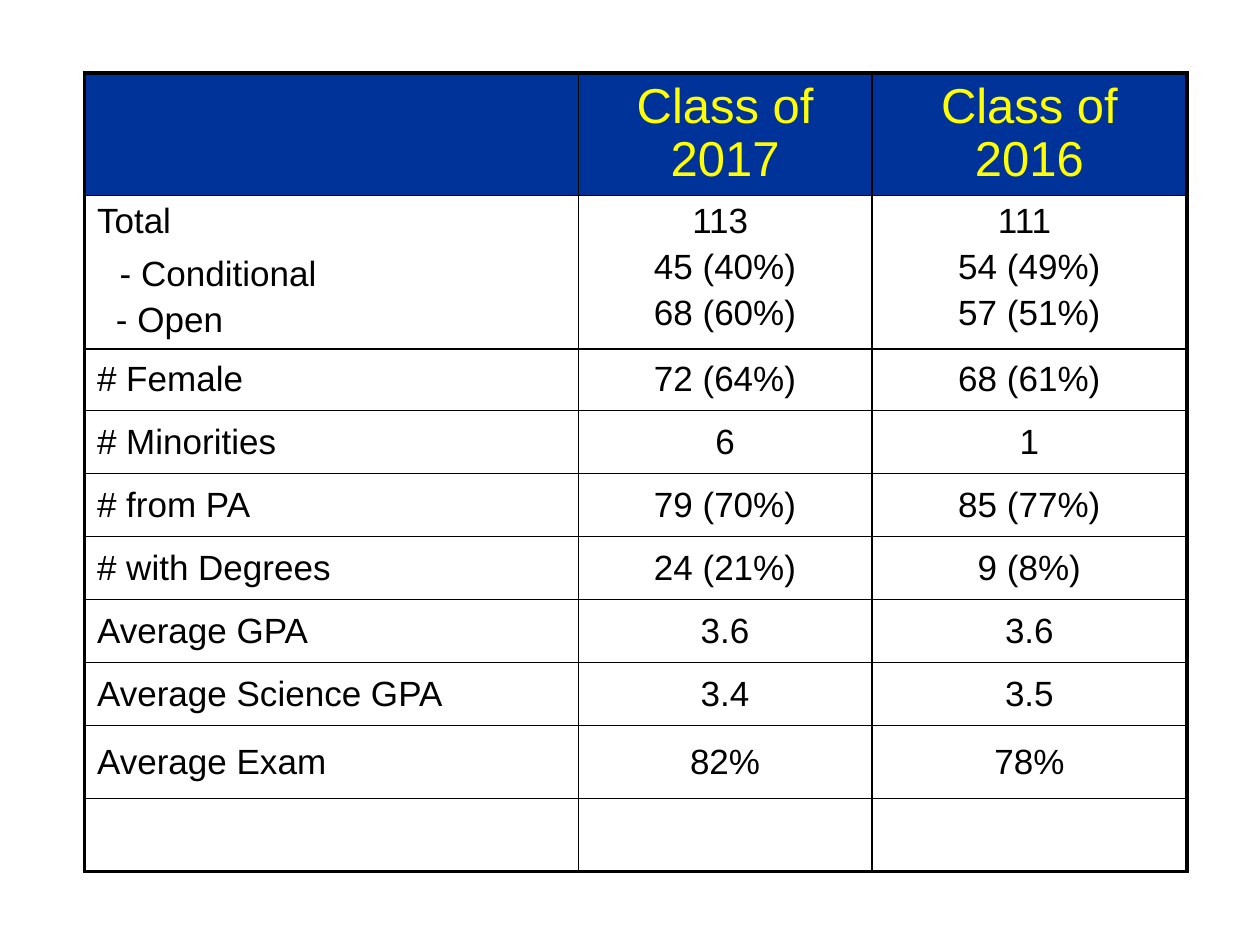
from lxml.etree import SubElement
from pptx import Presentation
from pptx.dml.color import RGBColor
from pptx.enum.text import MSO_ANCHOR as Anchor, PP_ALIGN as Align
from pptx.oxml.ns import qn
from pptx.util import Inches, Pt

BLACK = RGBColor(0x00, 0x00, 0x00)
NAVY = RGBColor(0x00, 0x33, 0x99)
YELLOW = RGBColor(0xFF, 0xFF, 0x00)

COLUMN_WIDTHS = [3.92, 2.33, 2.5]
ROW_HEIGHTS = [0.97, 1.22, 0.49] + [0.5] * 5 + [0.58] * 2
ROWS = [
    ["", "Class of 2017", "Class of 2016"],
    ["Total\n- Conditional\n- Open", "113 \n45 (40%)\n68 (60%)", "111 \n54 (49%)\n57 (51%)"],
    ["# Female", "72 (64%)", "68 (61%)"],
    ["# Minorities", "6", "1"],
    ["# from PA", "79 (70%)", "85 (77%)"],
    ["# with Degrees", "24 (21%)", "9 (8%)"],
    ["Average GPA", "3.6", "3.6"],
    ["Average Science GPA", "3.4", "3.5"],
    ["Average Exam", "82%", "78%"],
    ["", "", ""],
]


class ClassTable:
    font_name = "Arial"
    header_size, body_size = Pt(28), Pt(20)
    thin, thick = Pt(1), Pt(2.25)

    def __init__(self, slide):
        self.slide = slide

    def add_table(self, left, top, widths, heights, rows):
        frame = self.slide.shapes.add_table(
            len(rows), len(widths), Inches(left), Inches(top),
            Inches(sum(widths)), Inches(sum(heights)))
        self.table = frame.table
        self.table.first_row = self.table.horz_banding = False
        for column, width in zip(self.table.columns, widths):
            column.width = Inches(width)
        for row, height in zip(self.table.rows, heights):
            row.height = Inches(height)
        for row_index, texts in enumerate(rows):
            for column_index, text in enumerate(texts):
                self.fill_cell(row_index, column_index, text)

    def fill_cell(self, row, column, text):
        cell = self.table.cell(row, column)
        last_row, last_column = len(self.table.rows) - 1, len(self.table.columns) - 1
        # The outer frame is thick, the inner grid thin
        self.add_borders(cell, lnL=column == 0, lnR=column == last_column,
                         lnT=row == 0, lnB=row == last_row)
        header = row == 0
        if header:
            cell.fill.solid()
            cell.fill.fore_color.rgb = NAVY
        else:
            cell.fill.background()
        if not text:
            return
        cell.text_frame.text = text
        paragraphs = cell.text_frame.paragraphs
        cell.vertical_anchor = Anchor.TOP if len(paragraphs) > 1 else Anchor.MIDDLE
        for para in paragraphs:
            para.alignment = Align.LEFT if column == 0 else Align.CENTER
            if header:
                para.line_spacing = 0.97
            for span in para.runs:
                span.font.name = self.font_name
                span.font.size = self.header_size if header else self.body_size
                span.font.color.rgb = YELLOW if header else BLACK
        for para in paragraphs[1:]:
            para.space_before = Pt(4)

    def add_borders(self, cell, **sides):
        properties = cell._tc.get_or_add_tcPr()
        for side, outer in sides.items():
            width = self.thick if outer else self.thin
            line = SubElement(properties, qn("a:" + side), w=str(int(width)))
            fill = SubElement(line, qn("a:solidFill"))
            SubElement(fill, qn("a:srgbClr"), val=str(BLACK))

    def indent(self, para, inches):
        para._p.get_or_add_pPr().set("marL", str(int(Inches(inches))))


def main():
    deck = Presentation()
    deck.slide_width, deck.slide_height = Inches(10), Inches(7.5)
    page = deck.slides.add_slide(deck.slide_layouts[6])

    # Class comparison
    comparison = ClassTable(page)
    comparison.add_table(0.67, 0.58, COLUMN_WIDTHS, ROW_HEIGHTS, ROWS)

    # Sub-items under the total
    _, conditional, opened = comparison.table.cell(1, 0).text_frame.paragraphs
    comparison.indent(conditional, 0.18)
    comparison.indent(opened, 0.15)
    conditional.space_before = Pt(8)

    deck.save("out.pptx")


if __name__ == "__main__":
    main()
